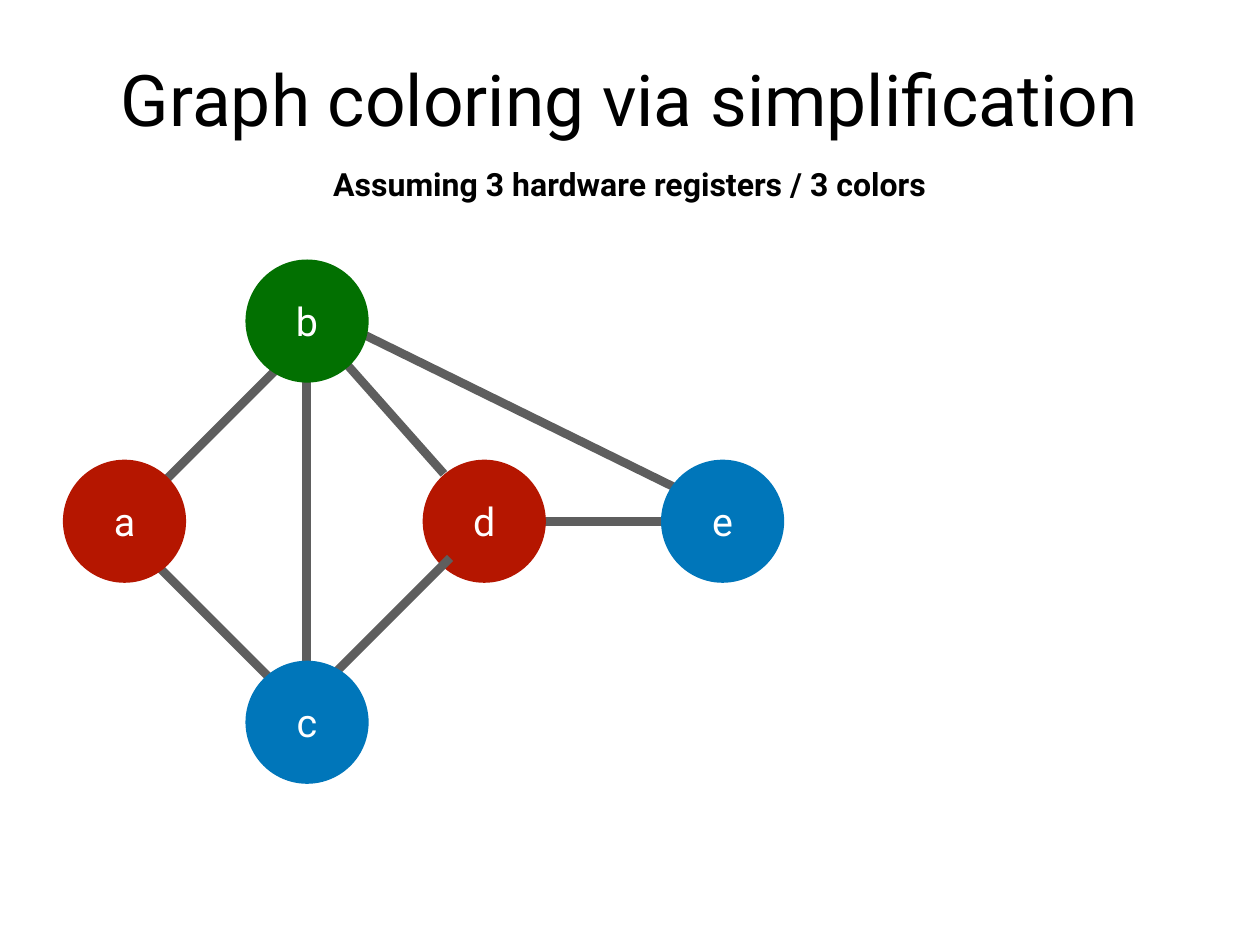
from lxml import etree
from pptx import Presentation
from pptx.dml.color import RGBColor
from pptx.enum import shapes, text
from pptx.oxml.ns import qn
from pptx.util import Inches, Pt

BLACK = RGBColor(0x00, 0x00, 0x00)
WHITE = RGBColor(0xFF, 0xFF, 0xFF)
RED = RGBColor(0xB5, 0x16, 0x00)
GREEN = RGBColor(0x02, 0x70, 0x01)
BLUE = RGBColor(0x00, 0x76, 0xBA)
EDGE_GRAY = RGBColor(0x5E, 0x5E, 0x5E)

FONT = "Roboto"
INSET = 0.06
NODE_SIZE = 1.39
EDGE_WIDTH = 7

# Node: left, top (inches from the graph's corner), register colour
NODES = {
    "a": (0, 2.26, RED),
    "b": (2.06, 0, GREEN),
    "c": (2.06, 4.53, BLUE),
    "d": (4.06, 2.26, RED),
    "e": (6.75, 2.26, BLUE),
}
# Edge: x and y of both ends (inches from the graph's corner)
EDGES = {
    "be": (6.96, 2.6, 3.34, 0.82),
    "bd": (4.3, 2.42, 3.13, 1.1),
    "de": (4.99, 2.96, 6.88, 2.96),
    "cd": (3.05, 4.69, 4.37, 3.37),
    "bc": (2.75, 1.35, 2.75, 4.56),
    "ab": (1.05, 2.6, 2.44, 1.21),
    "ac": (2.41, 4.8, 1.09, 3.48),
}
# Back to front: the edge c-d overlaps node d
STACKING = ["be", "bd", "de", "d", "cd", "bc", "e", "ab", "ac", "b", "c", "a"]


def write_centered(shape, wording, size, color, bold=False):
    frame = shape.text_frame
    frame.margin_left = frame.margin_right = Inches(INSET)
    frame.margin_top = frame.margin_bottom = Inches(INSET)
    frame.vertical_anchor = text.MSO_ANCHOR.MIDDLE
    frame.text = wording
    paragraph = frame.paragraphs[0]
    paragraph.alignment = text.PP_ALIGN.CENTER
    paragraph.font.name = FONT
    paragraph.font.size = Pt(size)
    paragraph.font.bold = bold
    paragraph.font.color.rgb = color


def add_heading(slide, left, top, width, height):
    title = slide.shapes.title
    title.left, title.top = Inches(left), Inches(top)
    title.width, title.height = Inches(width), Inches(height)
    write_centered(title, "Graph coloring via simplification", 57.9, BLACK)
    title.text_frame.auto_size = text.MSO_AUTO_SIZE.NONE


def add_assumption(slide, left, top, width, height):
    assumption = slide.shapes.add_textbox(
        Inches(left), Inches(top), Inches(width), Inches(height))
    write_centered(assumption, "Assuming 3 hardware registers / 3 colors",
                   26, BLACK, bold=True)
    assumption.text_frame.word_wrap = False
    assumption.text_frame.auto_size = text.MSO_AUTO_SIZE.SHAPE_TO_FIT_TEXT


def add_node(slide, label, left, top, color):
    node = slide.shapes.add_shape(
        shapes.MSO_SHAPE.OVAL, Inches(left), Inches(top),
        Inches(NODE_SIZE), Inches(NODE_SIZE))
    node.shadow.inherit = False
    node.fill.solid()
    node.fill.fore_color.rgb = color
    node.line.fill.background()
    write_centered(node, label, 32, WHITE)


def add_edge(slide, x1, y1, x2, y2):
    edge = slide.shapes.add_connector(
        shapes.MSO_CONNECTOR.STRAIGHT,
        Inches(x1), Inches(y1), Inches(x2), Inches(y2))
    edge.line.color.rgb = EDGE_GRAY
    edge.line.width = Pt(EDGE_WIDTH)
    etree.SubElement(edge._element.spPr, qn("a:effectLst"))


def add_interference_graph(slide, left, top):
    for part in STACKING:
        if part in NODES:
            x, y, color = NODES[part]
            add_node(slide, part, left + x, top + y, color)
        else:
            x1, y1, x2, y2 = EDGES[part]
            add_edge(slide, left + x1, top + y1, left + x2, top + y2)


def main():
    deck = Presentation()
    deck.slide_width, deck.slide_height = Inches(14.22), Inches(10.67)
    slide = deck.slides.add_slide(deck.slide_layouts.get_by_name("Title Only"))
    slide.background.fill.solid()
    slide.background.fill.fore_color.rgb = WHITE
    add_heading(slide, 1.04, 0.28, 12.14, 1.65)
    add_assumption(slide, 3.52, 1.8, 7.18, 0.55)
    add_interference_graph(slide, 0.71, 2.93)
    deck.save("out.pptx")


if __name__ == "__main__":
    main()
